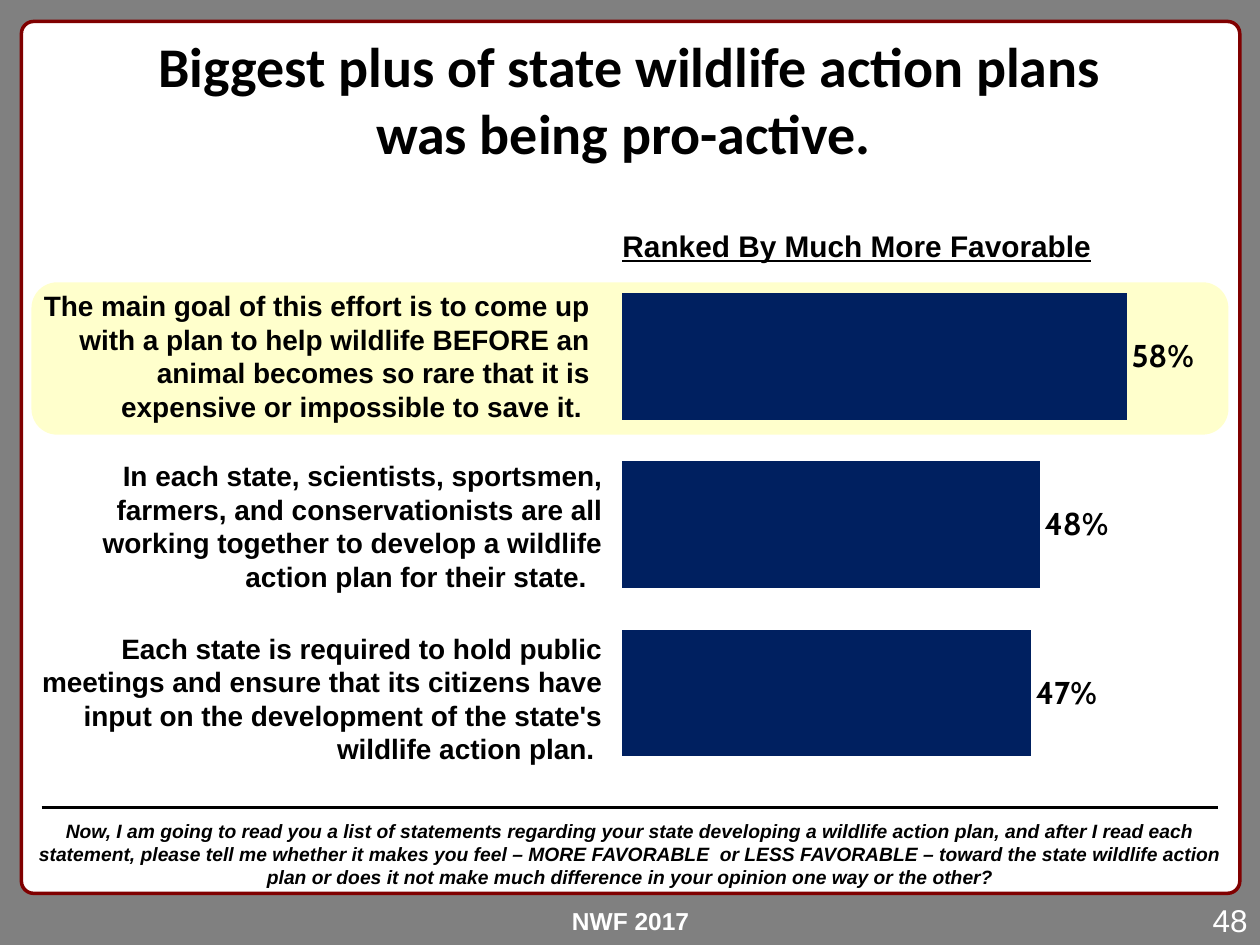
from dataclasses import dataclass

from lxml import etree
from pptx import Presentation
from pptx.chart.data import CategoryChartData
from pptx.dml.color import RGBColor
from pptx.enum.chart import XL_CHART_TYPE, XL_LABEL_POSITION
from pptx.enum.shapes import MSO_CONNECTOR, MSO_SHAPE
from pptx.enum.text import PP_ALIGN
from pptx.oxml import parse_xml
from pptx.oxml.ns import nsdecls, qn
from pptx.util import Inches, Pt

BAR = XL_CHART_TYPE.BAR_CLUSTERED
OUTSIDE = XL_LABEL_POSITION.OUTSIDE_END
ROUND = MSO_SHAPE.ROUNDED_RECTANGLE
STRAIGHT = MSO_CONNECTOR.STRAIGHT
LEFT, CENTER, RIGHT = PP_ALIGN.LEFT, PP_ALIGN.CENTER, PP_ALIGN.RIGHT

BLACK, WHITE, GRAY = "000000", "FFFFFF", "808080"
MAROON, NAVY, CREAM = "800000", "002060", "FFFFCC"
PAD = (0.1, 0.05)


@dataclass
class Box:
    x: float
    y: float
    w: float
    h: float

    def place(self) -> list:
        return [Inches(n) for n in (self.x, self.y, self.w, self.h)]


@dataclass
class Claim:
    text: str
    share: float
    box: Box
    pad: tuple = (0, 0)


CLAIMS = [
    Claim("The main goal of this effort is to come up with a plan to help "
          "wildlife BEFORE an animal becomes so rare that it is expensive "
          "or impossible to save it. ",
          0.58, Box(0.19, 2.24, 4.59, 1.18), PAD),
    Claim("In each state, scientists, sportsmen, farmers, and "
          "conservationists are all working together to develop a wildlife "
          "action plan for their state.  ",
          0.48, Box(0.19, 3.64, 4.59, 1.08)),
    Claim("Each state is required to hold public meetings and ensure that "
          "its citizens have input on the development of the state's "
          "wildlife action plan. ",
          0.47, Box(0.19, 5.01, 4.59, 1.08)),
]
QUESTION = (
    "Now, I am going to read you a list of statements regarding your state "
    "developing a wildlife action plan, and after I read each statement, "
    "please tell me whether it makes you feel – MORE FAVORABLE  or LESS "
    "FAVORABLE – toward the state wildlife action plan or does it not make "
    "much difference in your opinion one way or the other?")


def color(code: str) -> RGBColor:
    return RGBColor.from_string(code)


def style(font, size: float, face: str = "Arial", ink: str = BLACK,
          bold: bool = True) -> None:
    font.size, font.name, font.bold = Pt(size), face, bold
    font.color.rgb = color(ink)


def write(slide, box: Box, text: str, *, size: float, face: str = "Arial",
          ink: str = BLACK, bold: bool = True, slant: bool = False,
          under: bool = False, align=CENTER, pad: tuple = (0, 0),
          wrap: bool = True) -> None:
    frame = slide.shapes.add_textbox(*box.place()).text_frame
    frame.word_wrap = wrap
    frame.margin_left = frame.margin_right = Inches(pad[0])
    frame.margin_top = frame.margin_bottom = Inches(pad[1])
    frame.text = text
    for para in frame.paragraphs:
        para.alignment = align
        for run in para.runs:
            style(run.font, size, face, ink, bold)
            run.font.italic, run.font.underline = slant, under


def panel(slide, box: Box, fill: str, edge: str = "",
          curve: float = 0.17) -> None:
    shape = slide.shapes.add_shape(ROUND, *box.place())
    shape.shadow.inherit = False
    shape.adjustments[0] = curve
    shape.fill.solid()
    shape.fill.fore_color.rgb = color(fill)
    if edge:
        shape.line.color.rgb = color(edge)
        shape.line.width = Pt(2)
    else:
        shape.line.fill.background()


def rule(slide, left: float, right: float, y: float) -> None:
    line = slide.shapes.add_connector(
        STRAIGHT, Inches(left), Inches(y), Inches(right), Inches(y))
    line.line.color.rgb = color(BLACK)
    line.line.width = Pt(0)
    etree.SubElement(line._element.spPr, qn("a:effectLst"))


def bars(slide, box: Box, claims: list[Claim]) -> None:
    data = CategoryChartData(number_format="0%")
    data.categories = [str(i) for i in range(1, len(claims) + 1)]
    data.add_series("Series 1", [claim.share for claim in claims])
    chart = slide.shapes.add_chart(BAR, *box.place(), data).chart
    chart.has_legend = chart.has_title = False
    style(chart.font, 18, bold=False)

    # Hidden axes, first claim on top
    cats, vals = chart.category_axis, chart.value_axis
    cats.reverse_order = True
    vals.minimum_scale, vals.maximum_scale = 0, 0.7
    vals.has_major_gridlines = False
    cats.visible = vals.visible = False

    # Bars and their labels
    plot = chart.plots[0]
    plot.gap_width, plot.vary_by_categories = 33, False
    fill = plot.series[0].format.fill
    fill.solid()
    fill.fore_color.rgb = color(NAVY)
    plot.has_data_labels = True
    tags = plot.data_labels
    tags.show_value, tags.position = True, OUTSIDE
    tags.number_format, tags.number_format_is_linked = "0%", False
    style(tags.font, 18, "Cabin")

    # Plot fills the whole frame
    area = chart._chartSpace.chart.plotArea
    for old in area.findall(qn("c:layout")):
        area.remove(old)
    spots = (("x", 0), ("y", 0), ("w", 1), ("h", 1))
    area.insert(0, parse_xml(
        f"<c:layout {nsdecls('c')}><c:manualLayout>"
        '<c:layoutTarget val="inner"/>'
        '<c:xMode val="edge"/><c:yMode val="edge"/>'
        + "".join(f'<c:{key} val="{val}"/>' for key, val in spots)
        + "</c:manualLayout></c:layout>"))


def main() -> None:
    deck = Presentation()
    deck.slide_width, deck.slide_height = Inches(10), Inches(7.5)
    slide = deck.slides.add_slide(deck.slide_layouts[6])

    # Frame and footer
    slide.background.fill.solid()
    slide.background.fill.fore_color.rgb = color(GRAY)
    panel(slide, Box(0.17, 0.17, 9.67, 6.92), WHITE, MAROON, 0.014)
    write(slide, Box(2.42, 7.14, 5.17, 0.33), "NWF 2017", size=14,
          ink=WHITE, pad=PAD, wrap=False)
    write(slide, Box(8.46, 7.1, 1.54, 0.4), "48", size=18, ink=WHITE,
          bold=False, align=RIGHT, pad=PAD)

    # Highlight, question and title
    panel(slide, Box(0.25, 2.24, 9.5, 1.21), CREAM)
    write(slide, Box(0.17, 6.5, 9.67, 0.56), QUESTION, size=11, slant=True)
    write(slide, Box(0, 0.25, 10, 1.08),
          "Biggest plus of state wildlife action plans\n"
          "was being pro-active. ", size=32, face="Calibri")

    # Ranked claims
    bars(slide, Box(4.94, 2.16, 4.83, 4.01), CLAIMS)
    for claim in CLAIMS:
        write(slide, claim.box, claim.text, size=16, align=RIGHT,
              pad=claim.pad)
    rule(slide, 0.33, 9.67, 6.41)
    write(slide, Box(4.94, 1.81, 3.91, 0.29), "Ranked By Much More Favorable",
          size=17, under=True, align=LEFT, wrap=False)

    deck.save("out.pptx")


if __name__ == "__main__":
    main()
